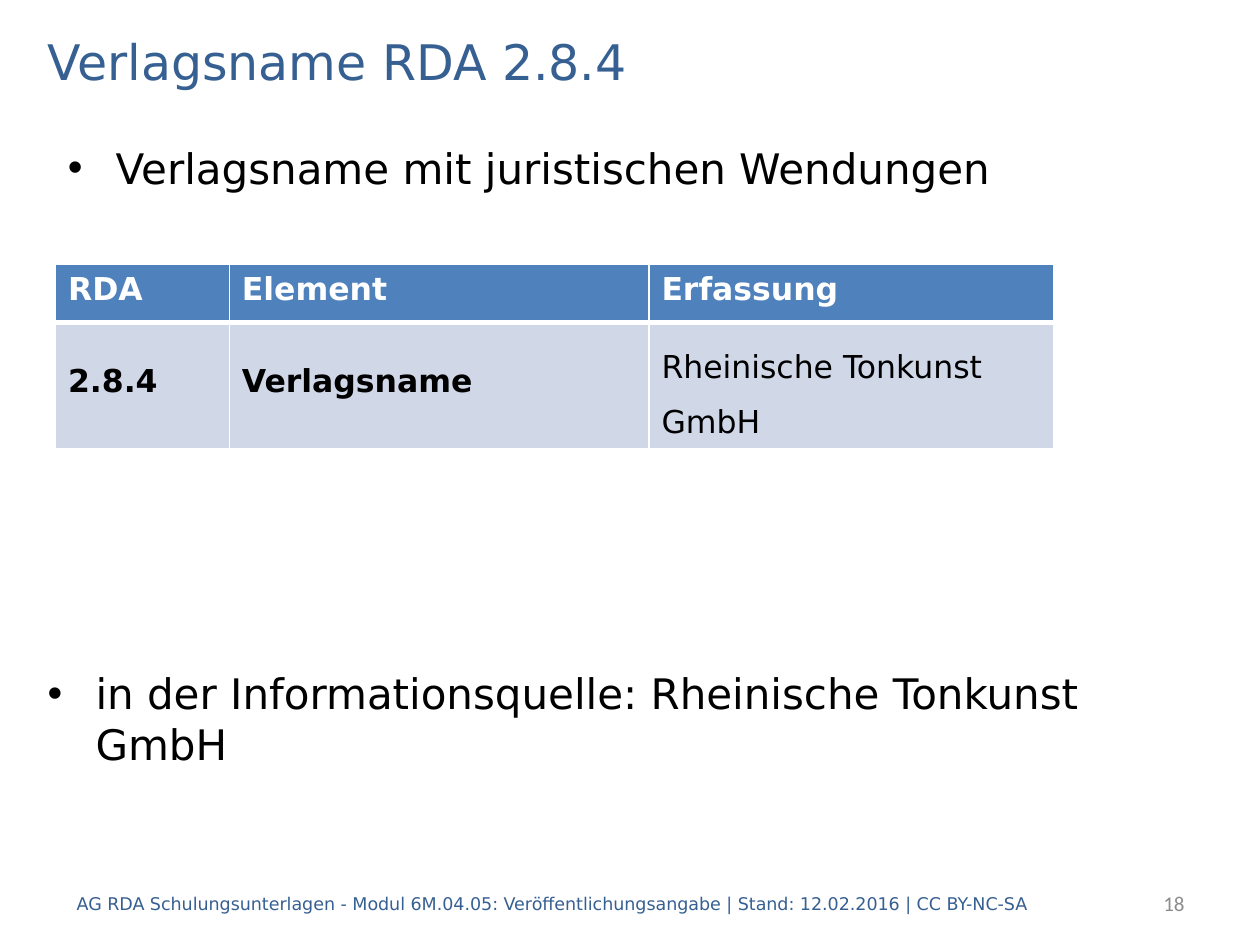
from lxml.etree import SubElement
from pptx import Presentation
from pptx.dml.color import RGBColor
from pptx.enum.text import MSO_ANCHOR, MSO_AUTO_SIZE, PP_ALIGN
from pptx.oxml.ns import qn
from pptx.util import Inches, Pt

COLORS = {"title": "376092", "text": "000000", "number": "8C8C8C",
          "header": "4F81BD", "band": "D0D8E8", "white": "FFFFFF"}
FONT = "DejaVu Sans"
LEFT, INDENT, WIDTH = 0.28, 0.44, 9.45
FOOT_TOP, FOOT_HEIGHT = 6.97, 0.4
COLS, ROWS = (1.38, 3.33, 3.21), (0.46, 0.96)
PUBLISHER = "Rheinische Tonkunst GmbH"
CELLS = (("RDA", "Element", "Erfassung"),
         ("2.8.4", "Verlagsname", PUBLISHER))


def add_run(p, text, size, color, bold=False, font=FONT):
    """Append one formatted run to a paragraph."""
    r = p.add_run()
    r.text = text
    r.font.name, r.font.size, r.font.bold = font, Pt(size), bold
    r.font.color.rgb = RGBColor.from_string(COLORS[color])


def add_box(s, box, anchor=MSO_ANCHOR.TOP):
    """Add a wrapping text box and return its first paragraph."""
    tf = s.shapes.add_textbox(*map(Inches, box)).text_frame
    tf.word_wrap, tf.vertical_anchor = True, anchor
    return tf.paragraphs[0]


def add_title(s, box, text):
    """Move and format the title placeholder."""
    sp = s.shapes.title
    sp.left, sp.top, sp.width, sp.height = map(Inches, box)
    tf = sp.text_frame
    tf.auto_size, tf.vertical_anchor = MSO_AUTO_SIZE.NONE, MSO_ANCHOR.MIDDLE
    p = tf.paragraphs[0]
    p.alignment = PP_ALIGN.LEFT
    add_run(p, text, 28, "title")


def add_bullet(s, box, text):
    """Add a text box with one bulleted paragraph."""
    p = add_box(s, box)
    p.space_before = Pt(5)
    pPr = p._p.get_or_add_pPr()
    pPr.set("marL", str(Inches(0.38)))
    pPr.set("indent", str(-Inches(0.38)))
    SubElement(pPr, qn("a:buFont"), typeface="Arial")
    SubElement(pPr, qn("a:buChar"), char="•")
    add_run(p, text, 24, "text")


def set_borders(cell, bottom):
    """Draw white borders, with the given bottom width in points."""
    tcPr = cell._tc.get_or_add_tcPr()
    for i, (side, width) in enumerate(zip("LRTB", (1, 1, 1, bottom))):
        ln = tcPr.makeelement(qn(f"a:ln{side}"), {"w": str(Pt(width))})
        fill = SubElement(ln, qn("a:solidFill"))
        SubElement(fill, qn("a:srgbClr"), val=COLORS["white"])
        tcPr.insert(i, ln)


def add_elements(s, left, top):
    """Add the table of RDA elements at the given corner."""
    table = s.shapes.add_table(len(ROWS), len(COLS), Inches(left), Inches(top),
                               Inches(sum(COLS)), Inches(sum(ROWS))).table
    for col, width in zip(table.columns, COLS):
        col.width = Inches(width)
    for i, (row, height) in enumerate(zip(table.rows, ROWS)):
        row.height = Inches(height)
        header = i == 0
        for j, cell in enumerate(row.cells):
            entry = not header and j == len(COLS) - 1
            cell.fill.solid()
            cell.fill.fore_color.rgb = RGBColor.from_string(
                COLORS["header" if header else "band"])
            set_borders(cell, 3 if header else 1)
            p = cell.text_frame.paragraphs[0]
            if not header:
                cell.vertical_anchor = MSO_ANCHOR.MIDDLE
                p.line_spacing = 1.5 if entry else Pt(16)
                p.space_before = p.space_after = Pt(6)
            add_run(p, CELLS[i][j], 18, "white" if header else "text", not entry)


def add_footer(s, top, height):
    """Add the footer line and the slide number."""
    p = add_box(s, (0.51, top, 8.35, height), MSO_ANCHOR.MIDDLE)
    add_run(p, "AG RDA Schulungsunterlagen - Modul 6M.04.05: Veröffentlichungsangabe"
               " | Stand: 12.02.2016 | CC BY-NC-SA", 10, "title")
    p = add_box(s, (7.91, top, 1.59, height), MSO_ANCHOR.MIDDLE)
    p.alignment = PP_ALIGN.RIGHT
    add_run(p, "18", 12, "number", font="Calibri")


def main():
    """Build the slide and save it."""
    prs = Presentation()
    prs.slide_width, prs.slide_height = Inches(10), Inches(7.5)
    s = prs.slides.add_slide(prs.slide_layouts[5])
    add_title(s, (LEFT, 0.2, WIDTH, 0.56), "Verlagsname RDA 2.8.4")
    add_bullet(s, (LEFT, 5.25, WIDTH, 1.34),
               f"in der Informationsquelle: {PUBLISHER}")
    add_footer(s, FOOT_TOP, FOOT_HEIGHT)
    add_bullet(s, (INDENT, 1.08, WIDTH, 0.71),
               "Verlagsname mit juristischen Wendungen")
    add_elements(s, INDENT, 2.1)
    prs.save("out.pptx")


if __name__ == "__main__":
    main()
